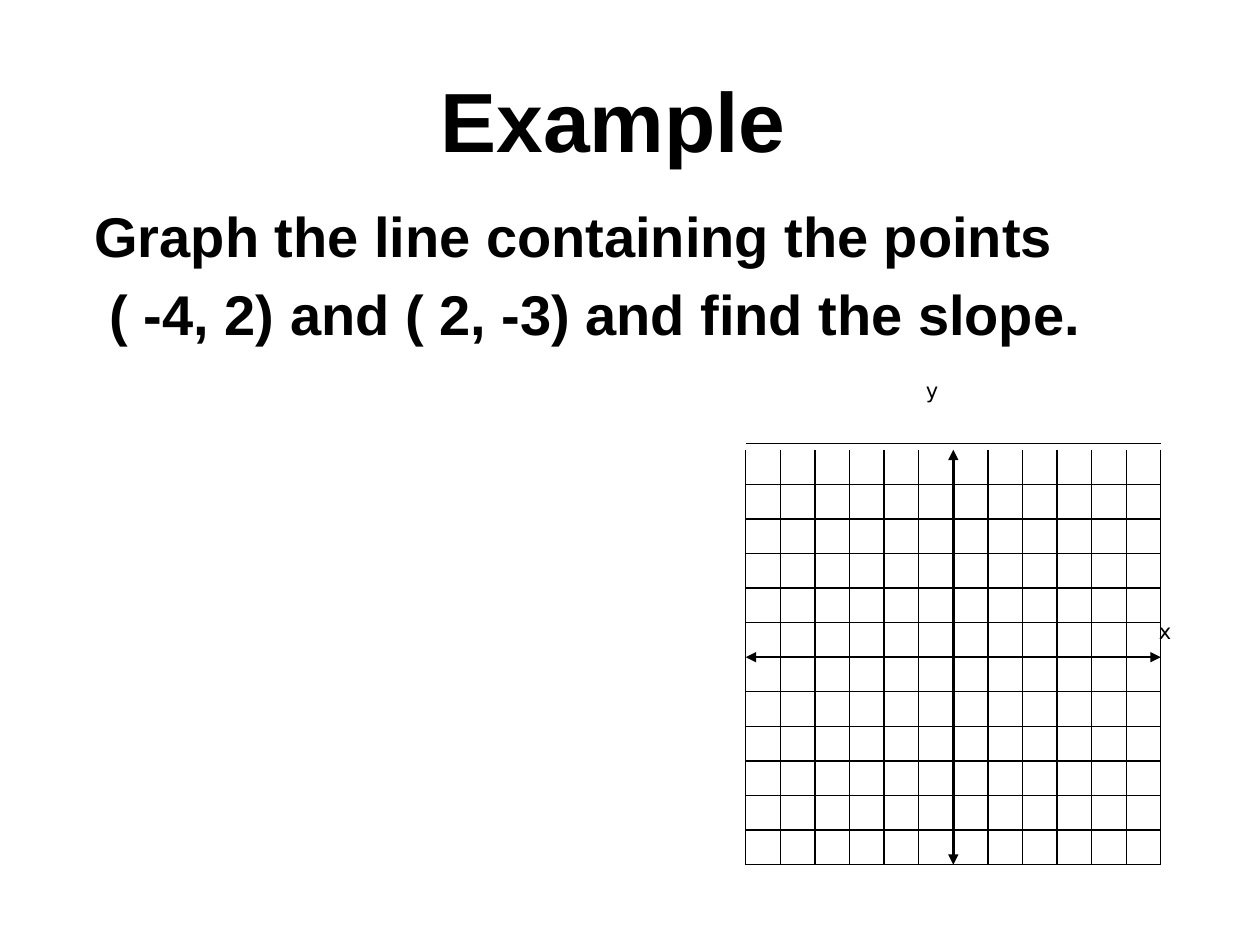
"""Builds a slide with a slope exercise and an empty coordinate grid."""
from lxml.etree import SubElement
from pptx import Presentation
from pptx.dml.color import RGBColor
from pptx.enum.shapes import MSO_CONNECTOR as Connector, MSO_SHAPE as Shape
from pptx.enum.text import MSO_ANCHOR as Anchor, PP_ALIGN as Align
from pptx.oxml.ns import qn
from pptx.util import Pt

BLACK = RGBColor(0, 0, 0)
WHITE = RGBColor(255, 255, 255)

TITLE = ["Example "]
EXERCISE = [
    "Graph the line containing the points",
    " ( -4, 2) and ( 2, -3) and find the slope.",
]
AXIS_LABELS = [("x", 655.2, 349.9), ("y", 522, 212.4)]
LABEL_SIZE = 49.5

CELLS = 12
AXIS = CELLS // 2
STEP = 19.76
GRID_LEFT, GRID_TOP = 426.2, 257
GRID_RIGHT = GRID_LEFT + CELLS * STEP
GRID_BOTTOM = GRID_TOP + CELLS * STEP
TOP_LINE = 253.3


def write(shape, lines, size, font, bold=False):
    frame = shape.text_frame
    frame.word_wrap = True
    frame.text = "\n".join(lines)
    for paragraph in frame.paragraphs:
        paragraph.alignment = Align.LEFT
        paragraph.font.size = Pt(size)
        paragraph.font.name = font
        paragraph.font.bold = bold
        paragraph.font.color.rgb = BLACK
    return frame


def add_line(shapes, x1, y1, x2, y2, is_axis):
    line = shapes.add_connector(Connector.STRAIGHT, Pt(x1), Pt(y1), Pt(x2), Pt(y2))
    line.line.color.rgb = BLACK
    line.line.width = Pt(1.5 if is_axis else 0.75)
    if is_axis:
        outline = line.line._get_or_add_ln()
        for end in ("a:headEnd", "a:tailEnd"):
            SubElement(outline, qn(end), type="triangle")
    SubElement(line._element.spPr, qn("a:effectLst"))


def main():
    presentation = Presentation()
    presentation.slide_width, presentation.slide_height = Pt(720), Pt(540)
    slide = presentation.slides.add_slide(presentation.slide_layouts[6])
    shapes = slide.shapes

    title = shapes.add_textbox(Pt(46.8), Pt(15.8), Pt(620.6), Pt(104.4))
    frame = write(title, TITLE, 48, "Arial", True)
    frame.vertical_anchor = Anchor.MIDDLE
    frame.paragraphs[0].alignment = Align.CENTER

    exercise = shapes.add_textbox(Pt(46.8), Pt(111.6), Pt(620.6), Pt(342.7))
    for paragraph in write(exercise, EXERCISE, 32, "Arial", True).paragraphs:
        paragraph.space_before = Pt(6.4)

    grid = shapes.add_group_shape().shapes
    for text, left, top in AXIS_LABELS:
        label = grid.add_shape(
            Shape.RECTANGLE, Pt(left), Pt(top), Pt(LABEL_SIZE), Pt(LABEL_SIZE)
        )
        label.shadow.inherit = False
        label.fill.solid()
        label.fill.fore_color.rgb = WHITE
        label.line.fill.background()
        write(label, [text], 12, "DejaVu Sans").vertical_anchor = Anchor.TOP

    for index in range(CELLS + 1):
        x = GRID_LEFT + index * STEP
        add_line(grid, x, GRID_TOP, x, GRID_BOTTOM, index == AXIS)
    for index in range(CELLS + 1):
        y = GRID_BOTTOM - index * STEP if index < CELLS else TOP_LINE
        add_line(grid, GRID_LEFT, y, GRID_RIGHT, y, index == AXIS)

    presentation.save("out.pptx")


if __name__ == "__main__":
    main()
